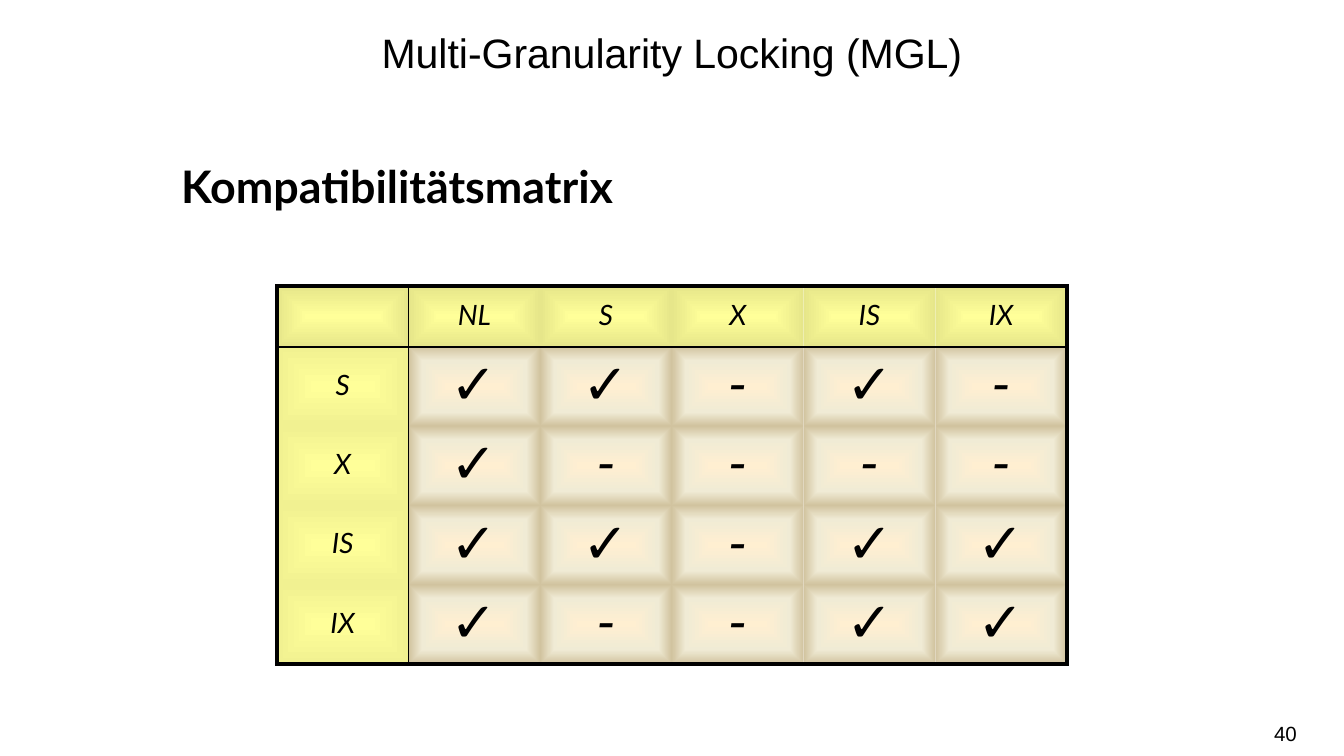
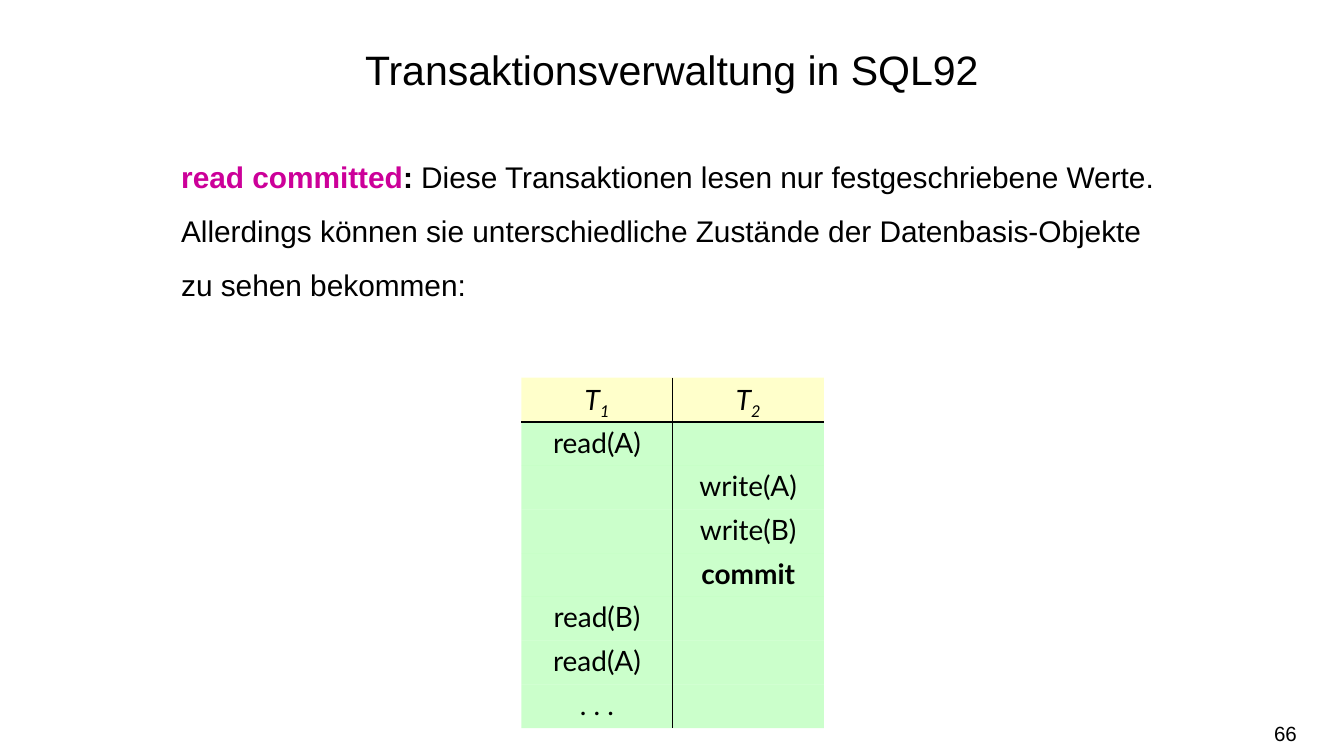
from pptx import Presentation
from pptx import oxml, util as u
from pptx.dml import color
from pptx.enum import text
from pptx.oxml import ns

INK = {"text": "000000", "key": "CC0099", "sun": "FFFF99", "head": "E6E68A",
       "side": "F1F191", "cream": "FFEFD1", "sand": "F0EBD5", "tan": "D1C39F",
       "mint": "99FF99"}
TITLE = {"size": u.Pt(22), "name": "Arial"}
BODY = {"size": u.Pt(16), "name": "Arial"}
NOTE = {"size": u.Pt(11), "name": "Arial"}
LEAD = {"size": u.Pt(24), "name": "Lato", "bold": True}
CELL = {"size": u.Pt(15), "name": "Lato"}
LOCK = {**CELL, "italic": True}
MARK = {**LOCK, "size": u.Pt(30)}
LEFT, MID, RIGHT = text.PP_ALIGN.LEFT, text.PP_ALIGN.CENTER, text.PP_ALIGN.RIGHT
PLAIN = "{2D5ABB26-0587-4C30-8999-92F81FD0307C}"
WIDE = u.Inches(0.15) // 2
THIN = WIDE // 2
PAD = {"margin_left": WIDE, "margin_right": WIDE,
       "margin_top": THIN, "margin_bottom": THIN,
       "vertical_anchor": text.MSO_ANCHOR.MIDDLE}


def apply(obj, form):
    """Set each attribute named in a dict of format values."""
    for key, val in form.items():
        setattr(obj, key, val)


def write(par, runs, form, align=LEFT, space=1.0):
    """Write runs of (words, extra format, colour) into a paragraph."""
    apply(par, {"alignment": align, "line_spacing": space})
    for words, extra, ink in runs:
        run = par.add_run()
        run.text = words
        more = dict(extra)
        base = more.pop("base", None)
        apply(run.font, {**form, **more})
        run.font.color.rgb = color.RGBColor.from_string(INK[ink])
        if base:
            run._r.get_or_add_rPr().set("baseline", str(base))


def label(slide, box, runs, form, align=LEFT, space=1.0, frame=None):
    """Place a wrapped text box."""
    area = slide.shapes.add_textbox(*map(u.Inches, box)).text_frame
    apply(area, {"word_wrap": True, **(frame or {})})
    write(area.paragraphs[0], runs, form, align, space)


def plain(words):
    """Return one run of black text."""
    return [(words, {}, "text")]


def node(body):
    """Make an XML element in the drawing namespace."""
    tag, rest = body.split(" ", 1)
    return oxml.parse_xml(f"<a:{tag} {ns.nsdecls('a')} {rest}")


def blend(*stops):
    """Return a gradient that runs from the centre to the edges."""
    marks = "".join(f'<a:gs pos="{pos * 1000}"><a:srgbClr val="{INK[ink]}"/></a:gs>'
                    for pos, ink in stops)
    return (f'gradFill rotWithShape="1"><a:gsLst>{marks}</a:gsLst><a:path path="shape">'
            '<a:fillToRect l="50000" t="50000" r="50000" b="50000"/></a:path></a:gradFill>')


def tint(ink):
    """Return a half transparent solid fill."""
    return (f'solidFill ><a:srgbClr val="{INK[ink]}"><a:alpha val="50000"/>'
            '</a:srgbClr></a:solidFill>')


def edge(side, width):
    """Return a cell border, empty when the width is zero."""
    paint = f'<a:solidFill><a:srgbClr val="{INK["text"]}"/></a:solidFill>'
    return (f'ln{side} w="{u.Pt(width)}">{paint if width else "<a:noFill/>"}'
            f'</a:ln{side}>')


def dress(cell, row, col, size, rim, fill):
    """Give a cell its padding, borders and fill."""
    apply(cell, PAD)
    rows, cols = size
    lines = {"L": rim if col == 0 else int(col == 1),
             "R": rim if col == cols - 1 else int(col == 0),
             "T": rim if row == 0 else int(row == 1),
             "B": rim if row == rows - 1 else int(row == 0)}
    prop = cell._tc.get_or_add_tcPr()
    for side, width in lines.items():
        prop.append(node(edge(side, width)))
    prop.append(node(fill))


def grid(slide, box, data, highs, rim, paint):
    """Place a table whose first row and column are ruled off."""
    size = len(data), len(data[0])
    table = slide.shapes.add_table(*size, *map(u.Inches, box)).table
    apply(table, {"first_row": False, "horz_banding": False})
    table._tbl.tblPr.find(ns.qn("a:tableStyleId")).text = PLAIN
    for col in table.columns:
        col.width = u.Inches(box[2] / size[1])
    for row, line in enumerate(data):
        table.rows[row].height = u.Inches(highs[row])
        for col, (runs, form) in enumerate(line):
            cell = table.cell(row, col)
            dress(cell, row, col, size, rim, paint(row, col))
            par = cell.text_frame.paragraphs[0]
            write(par, runs, form, MID, 0.9)
            if not runs:
                par._p.append(node('endParaRPr sz="1500"/>'))


def base(deck, box, title, num):
    """Add a slide with its title and number."""
    slide = deck.slides.add_slide(deck.slide_layouts[6])
    mid = {"vertical_anchor": text.MSO_ANCHOR.MIDDLE}
    label(slide, box, plain(title), TITLE, MID, 1.25, mid)
    label(slide, (7.41, 5.31, 2.24, 0.3), plain(num), NOTE, RIGHT, 1.0,
          {**mid, "margin_left": 0, "margin_right": 0})
    return slide


def matrix(slide, box):
    """Draw the matrix of lock modes."""
    modes = ["NL", "S", "X", "IS", "IX"]
    marks = ["✓✓-✓-", "✓----", "✓✓-✓✓", "✓--✓✓"]
    data = [[([], LOCK)] + [(plain(mode), LOCK) for mode in modes]]
    for mode, line in zip(modes[1:], marks):
        data.append([(plain(mode), LOCK)] + [(plain(mark), MARK) for mark in line])
    head = blend((0, "sun"), (100, "head"))
    side = blend((0, "sun"), (100, "side"))
    core = blend((0, "cream"), (65, "sand"), (100, "tan"))
    grid(slide, box, data, [0.45] + [0.59] * 4, 2.25,
         lambda row, col: head if row == 0 else core if col else side)


def sched(slide, box):
    """Draw the schedule of two transactions."""
    steps = [("read(A)", ""), ("", "write(A)"), ("", "write(B)"), ("", "commit"),
             ("read(B)", ""), ("read(A)", ""), (". . .", "")]
    data = [[([("T", {}, "text"), (num, {"base": -25000}, "text")], LOCK)
             for num in "12"]]
    for pair in steps:
        data.append([(plain(step) if step else [], {**CELL, "bold": step == "commit"})
                     for step in pair])
    grid(slide, box, data, [box[3] / len(data)] * len(data), 0,
         lambda row, col: tint("mint" if row else "sun"))


def main():
    """Build the deck."""
    deck = Presentation()
    wide = u.Inches(10)
    apply(deck, {"slide_width": wide, "slide_height": wide * 9 // 16})

    lock = base(deck, (1.25, 0, 7.5, 0.69), "Multi-Granularity Locking (MGL)", "40")
    label(lock, (1.25, 1.13, 4.06, 0.5), plain("Kompatibilitätsmatrix"), LEAD)
    matrix(lock, (2.06, 2.13, 5.88, 2.81))

    level = base(deck, (0, 0, 10, 0.94), "Transaktionsverwaltung in SQL92", "66")
    label(level, (1.25, 1, 7.5, 1.84), [
        ("read committed", {"bold": True}, "key"),
        (": ", {"bold": True}, "text"),
        ("Diese Transaktionen lesen nur festgeschriebene Werte. Allerdings können sie "
         "unterschiedliche Zustände der Datenbasis-Objekte zu sehen bekommen:",
         {}, "text")], BODY, LEFT, 1.5)
    sched(level, (3.88, 2.81, 2.25, 2.4))
    deck.save("out.pptx")


if __name__ == "__main__":
    main()
